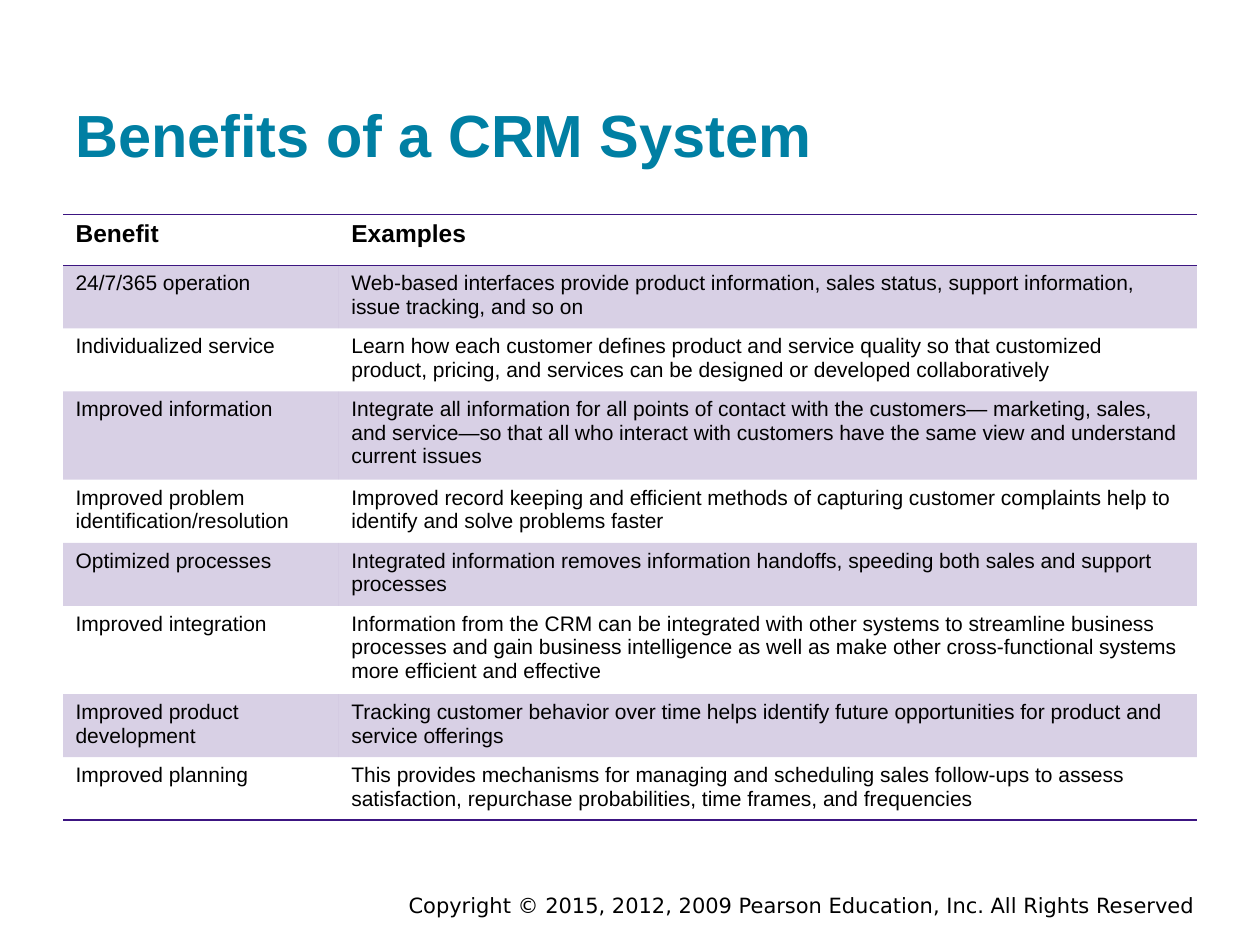
from lxml.etree import SubElement
from pptx import Presentation
from pptx.dml.color import RGBColor
from pptx.enum.text import MSO_ANCHOR, PP_ALIGN
from pptx.oxml.ns import qn
from pptx.util import Cm, Pt

TEAL, PURPLE, BLACK = "007FA3", "3C1581", "000000"
NO_STYLE = "{2D5ABB26-0587-4C30-8999-92F81FD0307C}"
HEADER = ("Benefit", "Examples")
BENEFITS = [
    ("24/7/365 operation",
     "Web-based interfaces provide product information, sales status, support "
     "information, issue tracking, and so on"),
    ("Individualized service",
     "Learn how each customer defines product and service quality so that customized "
     "product, pricing, and services can be designed or developed collaboratively"),
    ("Improved information",
     "Integrate all information for all points of contact with the customers— marketing, "
     "sales, and service—so that all who interact with customers have the same view and "
     "understand current issues"),
    ("Improved problem\nidentification/resolution",
     "Improved record keeping and efficient methods of capturing customer complaints "
     "help to identify and solve problems faster"),
    ("Optimized processes",
     "Integrated information removes information handoffs, speeding both sales and "
     "support processes"),
    ("Improved integration",
     "Information from the CRM can be integrated with other systems to streamline "
     "business processes and gain business intelligence as well as make other "
     "cross-functional systems more efficient and effective"),
    ("Improved product\ndevelopment",
     "Tracking customer behavior over time helps identify future opportunities for "
     "product and service offerings"),
    ("Improved planning",
     "This provides mechanisms for managing and scheduling sales follow-ups to assess "
     "satisfaction, repurchase probabilities, time frames, and frequencies"),
]


def rgb(color):
    """Turn a hex string into a colour."""
    return RGBColor.from_string(color)


def add_text(tf, text, size, color=BLACK, bold=False, font="Arial", align=PP_ALIGN.LEFT):
    """Write each line of text as a paragraph with one run."""
    for i, line in enumerate(text.split("\n")):
        p = tf.add_paragraph() if i else tf.paragraphs[0]
        p.alignment = align
        r = p.add_run()
        r.text = line
        r.font.name, r.font.size, r.font.bold = font, Pt(size), bold
        r.font.color.rgb = rgb(color)


def add_border(cell, side):
    """Draw a one-point rule on the T or B side of a cell."""
    ln = SubElement(cell._tc.get_or_add_tcPr(), qn(f"a:ln{side}"), w=str(Pt(1)))
    fill = SubElement(ln, qn("a:solidFill"))
    SubElement(fill, qn("a:srgbClr"), val=PURPLE)


def fill_cell(cell, banded):
    """Tint a banded cell with 20% purple and leave the others clear."""
    if not banded:
        cell.fill.background()
        return
    cell.fill.solid()
    cell.fill.fore_color.rgb = rgb(PURPLE)
    clr = cell._tc.tcPr.find(qn("a:solidFill")).find(qn("a:srgbClr"))
    SubElement(clr, qn("a:alpha"), val="20000")


def add_title(s, text):
    """Place and format the slide title."""
    sp = s.shapes.title
    sp.left, sp.top, sp.width, sp.height = Cm(1.27), Cm(0.61), Cm(22.86), Cm(3.05)
    tf = sp.text_frame
    tf.word_wrap, tf.vertical_anchor = True, MSO_ANCHOR.BOTTOM
    tf.margin_left = tf.margin_right = tf.margin_top = tf.margin_bottom = Cm(0.25)
    add_text(tf, text, 34, TEAL, True)


def add_benefits(s):
    """Add the table with ruled header and banded rows."""
    rows = [HEADER] + BENEFITS
    frame = s.shapes.add_table(len(rows), 2, Cm(1.27), Cm(4.32), Cm(22.86), Cm(9.27))
    table = frame.table
    table.first_row = table.horz_banding = False
    table._tbl.tblPr.find(qn("a:tableStyleId")).text = NO_STYLE
    for col, width in zip(table.columns, (5.56, 17.3)):
        col.width = Cm(width)
    for i, row in enumerate(rows):
        table.rows[i].height = Cm(1.03)
        sides = "TB" if i == 0 else "B" if i == len(rows) - 1 else ""
        for cell, text in zip(table.rows[i].cells, row):
            add_text(cell.text_frame, text, 12 if i else 14, bold=i == 0)
            for side in sides:
                add_border(cell, side)
            fill_cell(cell, i % 2 == 1)


def add_copyright(s, text):
    """Add the right-aligned copyright line."""
    tf = s.shapes.add_textbox(Cm(4.45), Cm(17.86), Cm(19.89), Cm(0.56)).text_frame
    tf.word_wrap = True
    add_text(tf, text, 12, font="DejaVu Sans", align=PP_ALIGN.RIGHT)


def main():
    """Build and save the slide."""
    prs = Presentation()
    prs.slide_width, prs.slide_height = Cm(25.4), Cm(19.05)
    s = prs.slides.add_slide(prs.slide_layouts[5])
    add_copyright(s, "Copyright © 2015, 2012, 2009 Pearson Education, Inc. All Rights Reserved")
    add_title(s, "Benefits of a CRM System")
    add_benefits(s)
    prs.save("out.pptx")


if __name__ == "__main__":
    main()
